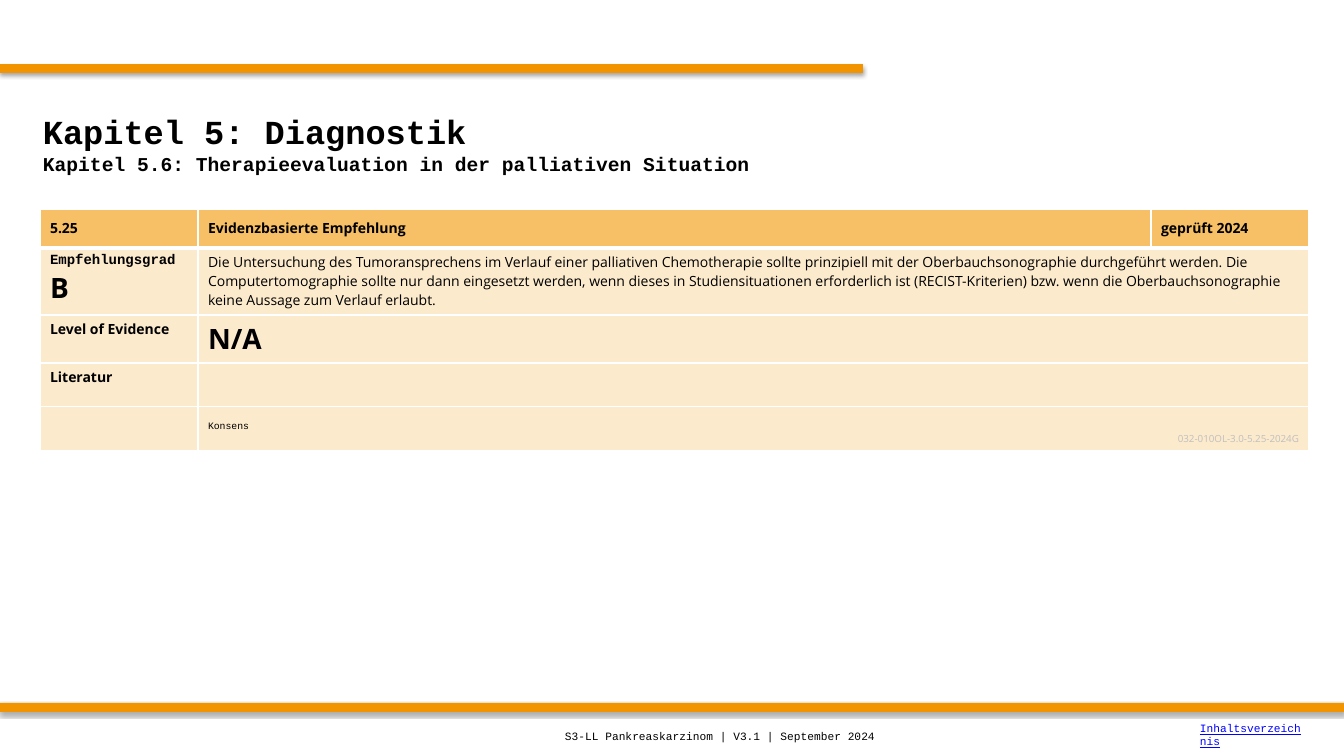
"""Build the slide with recommendation 5.25 on palliative therapy evaluation."""
import lxml.etree
import pptx
import pptx.dml.color
import pptx.enum.shapes
import pptx.enum.text
import pptx.oxml
import pptx.oxml.ns
import pptx.util

PX = 914400 / 100.8
ANCHOR = pptx.enum.text.MSO_ANCHOR
ALIGN = pptx.enum.text.PP_ALIGN
MONO, SANS = "Courier New", "Open Sans"
ORANGE, HEADER, BODY, WHITE = "F29400", "F7BF66", "FCEACC", "FFFFFF"

LABEL = {"name": SANS, "size": 10, "bold": True, "color": "000000"}
MONO_LABEL = {**LABEL, "name": MONO}
PLAIN = {**LABEL, "bold": False}
GRADE = {**LABEL, "size": 20}
CONSENSUS = {**PLAIN, "name": MONO, "size": 7}
CODE = {**PLAIN, "size": 7, "color": "BFBFBF", "align": ALIGN.RIGHT}
FOOTER = {**PLAIN, "name": MONO, "size": 8}
LINK = {**FOOTER, "color": "0000FF", "underline": True}

BARS = [(0, 64, 863, 9), (0, 703, 1344, 9)]
TEXTS = [
    ((33, 84, 1277, 118), [
        ("Kapitel 5: Diagnostik", {**MONO_LABEL, "size": 24}),
        ("Kapitel 5.6: Therapieevaluation in der palliativen Situation", {**MONO_LABEL, "size": 14}),
    ]),
    ((555, 717, 555, 39), [("S3-LL Pankreaskarzinom | V3.1 | September 2024", FOOTER)]),
    ((1190, 715, 123, 39), [("Inhaltsverzeichnis", LINK)]),
]
RECOMMENDATION = (
    "Die Untersuchung des Tumoransprechens im Verlauf einer palliativen Chemotherapie sollte "
    "prinzipiell mit der Oberbauchsonographie durchgeführt werden. Die Computertomographie sollte "
    "nur dann eingesetzt werden, wenn dieses in Studiensituationen erforderlich ist "
    "(RECIST-Kriterien) bzw. wenn die Oberbauchsonographie keine Aussage zum Verlauf erlaubt."
)
TABLE_PLACE = (40, 209)
COLUMNS = [158, 953, 158]
ROWS = [
    (39, [[("5.25", LABEL)], [("Evidenzbasierte Empfehlung", LABEL)], [("geprüft 2024", LABEL)]]),
    (67, [[("Empfehlungsgrad", MONO_LABEL), ("B", GRADE)], [(RECOMMENDATION, PLAIN)]]),
    (48, [[("Level of Evidence", LABEL)], [("N/A", GRADE)]]),
    (44, [[("Literatur", LABEL)], []]),
    (44, [[], [("Konsens", CONSENSUS), ("032-010OL-3.0-5.25-2024G", CODE)]]),
]


def px(*lengths):
    return [round(length * PX) for length in lengths]


def rgb(value):
    return pptx.dml.color.RGBColor.from_string(value)


def write(frame, lines):
    for index, (text, style) in enumerate(lines):
        para = frame.add_paragraph() if index else frame.paragraphs[0]
        para.alignment = style.get("align", ALIGN.LEFT)
        span = para.add_run()
        span.text = text
        for key, value in style.items():
            if key == "color":
                span.font.color.rgb = rgb(value)
            elif key != "align":
                setattr(span.font, key, pptx.util.Pt(value) if key == "size" else value)


def add_bar(slide, place):
    bar = slide.shapes.add_shape(pptx.enum.shapes.MSO_SHAPE.RECTANGLE, *px(*place))
    bar.fill.solid()
    bar.fill.fore_color.rgb = rgb(ORANGE)
    bar.line.fill.background()
    bar.shadow.inherit = False
    effects = bar.element.spPr.find(pptx.oxml.ns.qn("a:effectLst"))
    effects.append(pptx.oxml.parse_xml(
        f'<a:outerShdw {pptx.oxml.ns.nsdecls("a")} blurRad="40000" dist="23000" dir="5400000" '
        'rotWithShape="0"><a:srgbClr val="000000"><a:alpha val="35000"/></a:srgbClr></a:outerShdw>'
    ))


def add_text(slide, place, lines):
    box = slide.shapes.add_textbox(*px(*place))
    box.text_frame.word_wrap = True
    box.text_frame.vertical_anchor = ANCHOR.MIDDLE
    write(box.text_frame, lines)


def style_cell(cell, row, fill):
    properties = cell._tc.get_or_add_tcPr()
    thick = {"T": row == 1, "B": row == 0}
    for side in "LRTB":
        width = pptx.util.Pt(3 if thick.get(side) else 1)
        line = lxml.etree.SubElement(properties, pptx.oxml.ns.qn(f"a:ln{side}"), w=str(width))
        solid = lxml.etree.SubElement(line, pptx.oxml.ns.qn("a:solidFill"))
        lxml.etree.SubElement(solid, pptx.oxml.ns.qn("a:srgbClr"), val=WHITE)
    cell.fill.solid()
    cell.fill.fore_color.rgb = rgb(fill)


def add_recommendation(slide):
    size = sum(COLUMNS), sum(height for height, _ in ROWS)
    table = slide.shapes.add_table(len(ROWS), len(COLUMNS), *px(*TABLE_PLACE, *size)).table
    table.first_row = table.horz_banding = False
    for column, width in zip(table.columns, px(*COLUMNS)):
        column.width = width
    last = len(ROWS) - 1
    for row, (height, contents) in enumerate(ROWS):
        table.rows[row].height = px(height)[0]
        for cell in table.rows[row].cells:
            style_cell(cell, row, BODY if row else HEADER)
        if len(contents) < len(COLUMNS):
            table.cell(row, 1).merge(table.cell(row, 2))
        for column, lines in enumerate(contents):
            cell = table.cell(row, column)
            cell.vertical_anchor = {0: ANCHOR.MIDDLE, last: ANCHOR.BOTTOM}.get(row, ANCHOR.TOP)
            write(cell.text_frame, lines)


def main():
    deck = pptx.Presentation()
    deck.slide_width, deck.slide_height = px(1344, 756)
    slide = deck.slides.add_slide(deck.slide_layouts[6])
    for place in BARS:
        add_bar(slide, place)
    for place, lines in TEXTS:
        add_text(slide, place, lines)
    add_recommendation(slide)
    deck.save("out.pptx")


if __name__ == "__main__":
    main()
